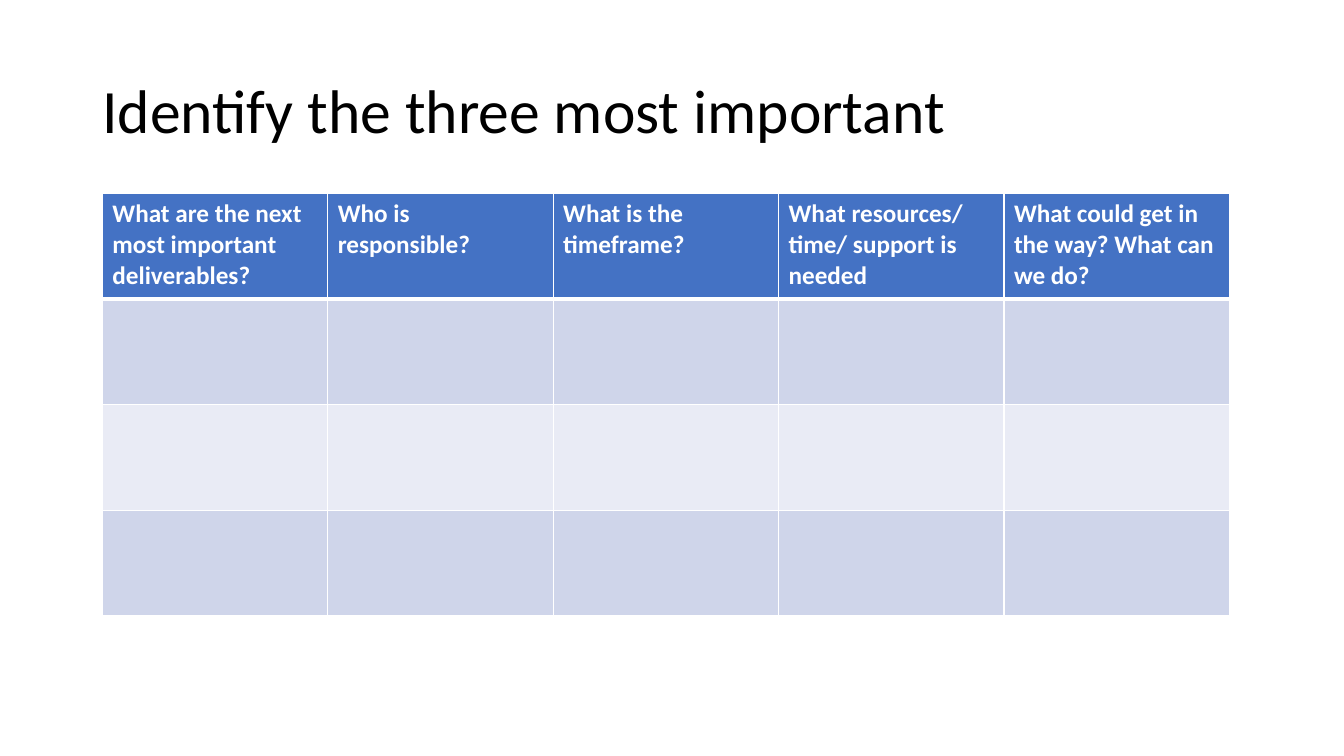
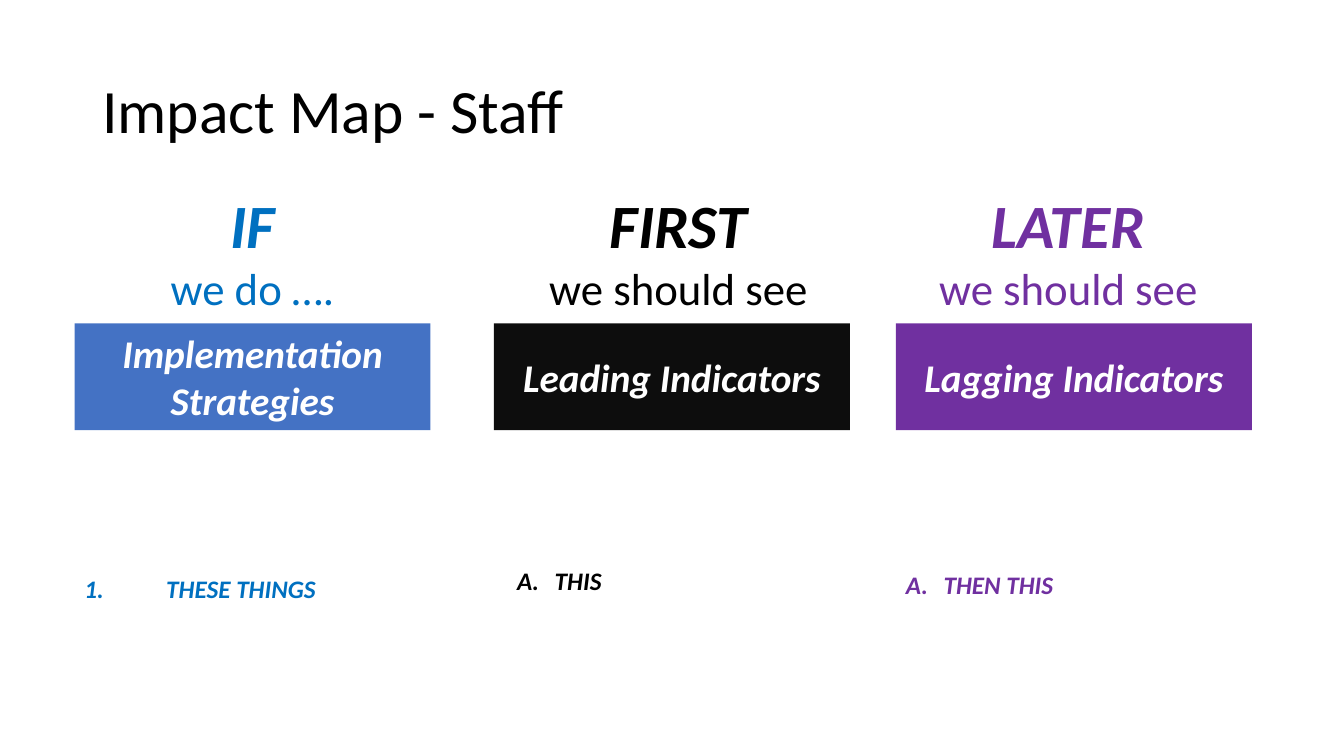
"""Build a deliverables table slide and a staff impact map slide."""
from dataclasses import dataclass

from lxml.etree import SubElement
from pptx import Presentation
from pptx.dml.color import RGBColor
from pptx.enum.shapes import MSO_SHAPE as Shape
from pptx.enum.text import MSO_ANCHOR as Anchor, PP_ALIGN as Align
from pptx.oxml.ns import qn
from pptx.util import Cm, Pt

FONT = "Calibri"
COLORS = {
    "black": "000000",
    "white": "FFFFFF",
    "blue": "4472C4",
    "bright": "0070C0",
    "charcoal": "0D0D0D",
    "purple": "7030A0",
    "row_dark": "CFD5EA",
    "row_light": "E9EBF5",
}
QUESTIONS = (
    "What are the next most important deliverables?",
    "Who is responsible?",
    "What is the timeframe?",
    "What resources/ time/ support is needed",
    "What could get in the way? What can we do?",
)
ROW_FILLS = ("blue", "row_dark", "row_light", "row_dark")
COLUMN_WIDTH, ROW_HEIGHT = 5.68, 2.66
STAGE_WIDTH = 8.97


@dataclass(frozen=True)
class Stage:
    """One column of the impact map, with lengths in centimetres."""
    heading: str
    promise: str
    label: str
    item: str
    color: str
    band: str
    band_left: float
    text_left: float
    heading_width: float
    item_top: float
    numbering: str = "alphaUcPeriod"
    hanging: float = 0.95


STAGES = (
    Stage("IF", "we do ….", "Implementation Strategies", "THESE THINGS", "bright", "blue",
          1.88, 1.88, 8.97, 14.32, "arabicPeriod", 2.06),
    Stage("FIRST", "we should see", "Leading Indicators", "THIS", "black", "charcoal",
          12.45, 12.78, 8.64, 14.12),
    Stage("LATER", "we should see", "Lagging Indicators", "THEN THIS", "purple", "purple",
          22.58, 22.58, 8.69, 14.24),
)


def rgb(name: str) -> RGBColor:
    """Return the named colour."""
    return RGBColor.from_string(COLORS[name])


def write(paragraph, text: str, *, size: float, color: str, bold: bool = False,
          italic: bool = False, align=Align.LEFT) -> None:
    """Add formatted text to a paragraph."""
    paragraph.alignment = align
    span = paragraph.add_run()
    span.text = text
    font = span.font
    font.name, font.size, font.bold, font.italic = FONT, Pt(size), bold, italic
    font.color.rgb = rgb(color)


def add_box(page, left: float, top: float, width: float, height: float):
    """Add a wrapping, vertically centred text box and return its frame."""
    box = page.shapes.add_textbox(Cm(left), Cm(top), Cm(width), Cm(height))
    frame = box.text_frame
    frame.word_wrap = True
    frame.vertical_anchor = Anchor.MIDDLE
    return frame


def add_page(deck, title: str):
    """Add a blank page with the shared title style."""
    page = deck.slides.add_slide(deck.slide_layouts[6])
    para = add_box(page, 2.33, 1.02, 29.21, 3.68).paragraphs[0]
    para.line_spacing = 0.9
    write(para, title, size=44, color="black")
    return page


def set_borders(cell, **widths: float) -> None:
    """Draw white cell borders with the given widths in points."""
    properties = cell._tc.get_or_add_tcPr()
    for side, width in widths.items():
        line = SubElement(properties, qn(f"a:ln{side}"), w=str(Pt(width)))
        fill = SubElement(line, qn("a:solidFill"))
        SubElement(fill, qn("a:srgbClr"), val=COLORS["white"])


def add_question_table(page) -> None:
    """Add the planning table with its header and empty rows."""
    rows, columns = len(ROW_FILLS), len(QUESTIONS)
    table = page.shapes.add_table(rows, columns, Cm(2.58), Cm(4.88), Cm(columns * COLUMN_WIDTH),
                                  Cm(rows * ROW_HEIGHT)).table
    table.first_row = table.horz_banding = False
    for column in table.columns:
        column.width = Cm(COLUMN_WIDTH)
    for index, (row, fill) in enumerate(zip(table.rows, ROW_FILLS)):
        row.height = Cm(ROW_HEIGHT)
        for cell in row.cells:
            set_borders(cell, L=1, R=1, T=3 if index == 1 else 1, B=3 if index == 0 else 1)
            cell.fill.solid()
            cell.fill.fore_color.rgb = rgb(fill)
    for cell, question in zip(table.rows[0].cells, QUESTIONS):
        write(cell.text_frame.paragraphs[0], question, size=18, color="white", bold=True)


def number(paragraph, scheme: str, hanging: float) -> None:
    """Give a paragraph automatic numbering with a hanging indent."""
    properties = paragraph._p.get_or_add_pPr()
    properties.set("marL", str(Cm(hanging)))
    properties.set("indent", str(-Cm(hanging)))
    SubElement(properties, qn("a:buFont"), typeface=FONT)
    SubElement(properties, qn("a:buAutoNum"), type=scheme)


def add_stage(page, stage: Stage) -> None:
    """Add the heading, band and numbered item of one stage."""
    frame = add_box(page, stage.text_left, 4.8, stage.heading_width, 3.02)
    write(frame.paragraphs[0], stage.heading, size=44, color=stage.color, bold=True,
          italic=True, align=Align.CENTER)
    write(frame.add_paragraph(), stage.promise, size=32, color=stage.color, align=Align.CENTER)

    band = page.shapes.add_shape(Shape.RECTANGLE, Cm(stage.band_left), Cm(8.15),
                                 Cm(STAGE_WIDTH), Cm(2.69))
    band.shadow.inherit = False
    band.fill.solid()
    band.fill.fore_color.rgb = rgb(stage.band)
    band.line.fill.background()
    band.text_frame.word_wrap = True
    band.text_frame.vertical_anchor = Anchor.MIDDLE
    write(band.text_frame.paragraphs[0], stage.label, size=28, color="white", bold=True,
          italic=True, align=Align.CENTER)

    para = add_box(page, stage.text_left, stage.item_top, STAGE_WIDTH, 1).paragraphs[0]
    number(para, stage.numbering, stage.hanging)
    write(para, stage.item, size=18, color=stage.color, bold=True, italic=True)


def main() -> None:
    """Build and save the deck."""
    deck = Presentation()
    deck.slide_width, deck.slide_height = Cm(33.87), Cm(19.05)
    add_question_table(add_page(deck, "Identify the three most important"))
    impact_page = add_page(deck, "Impact Map - Staff")
    for stage in STAGES:
        add_stage(impact_page, stage)
    deck.save("out.pptx")


if __name__ == "__main__":
    main()
